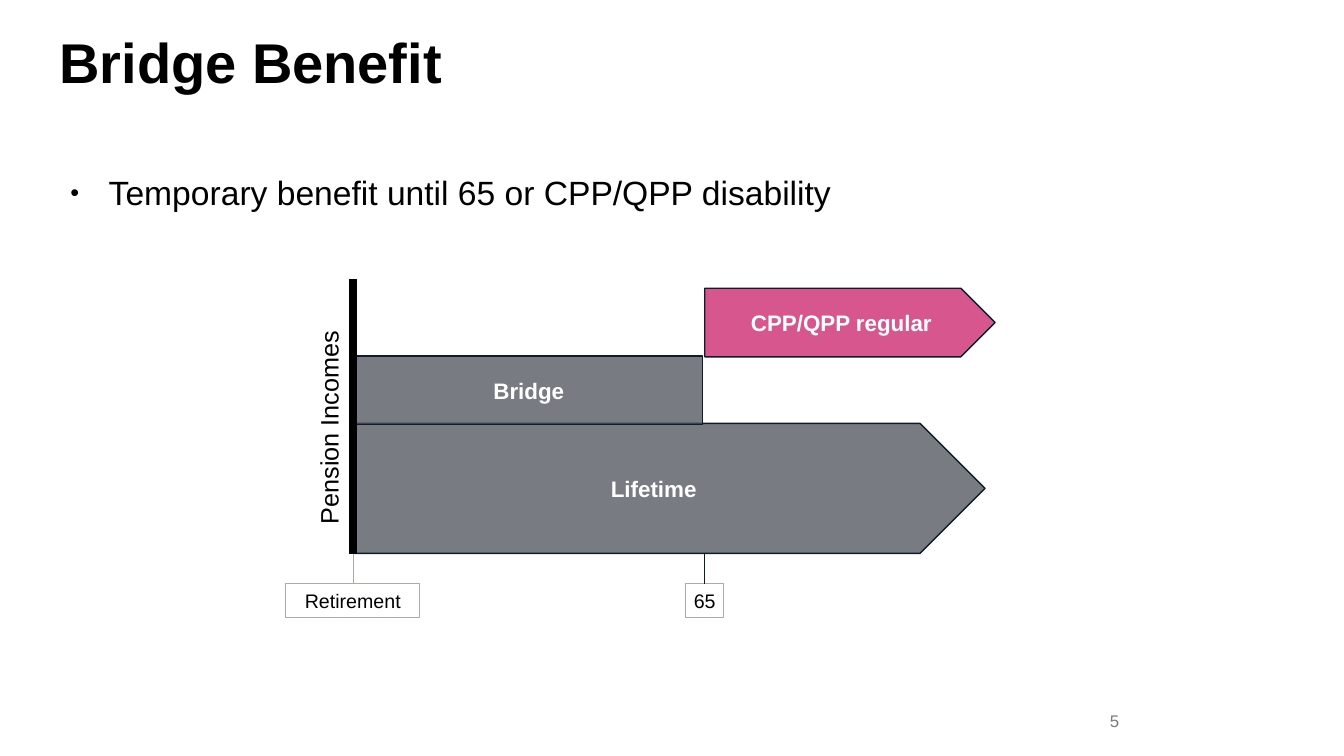
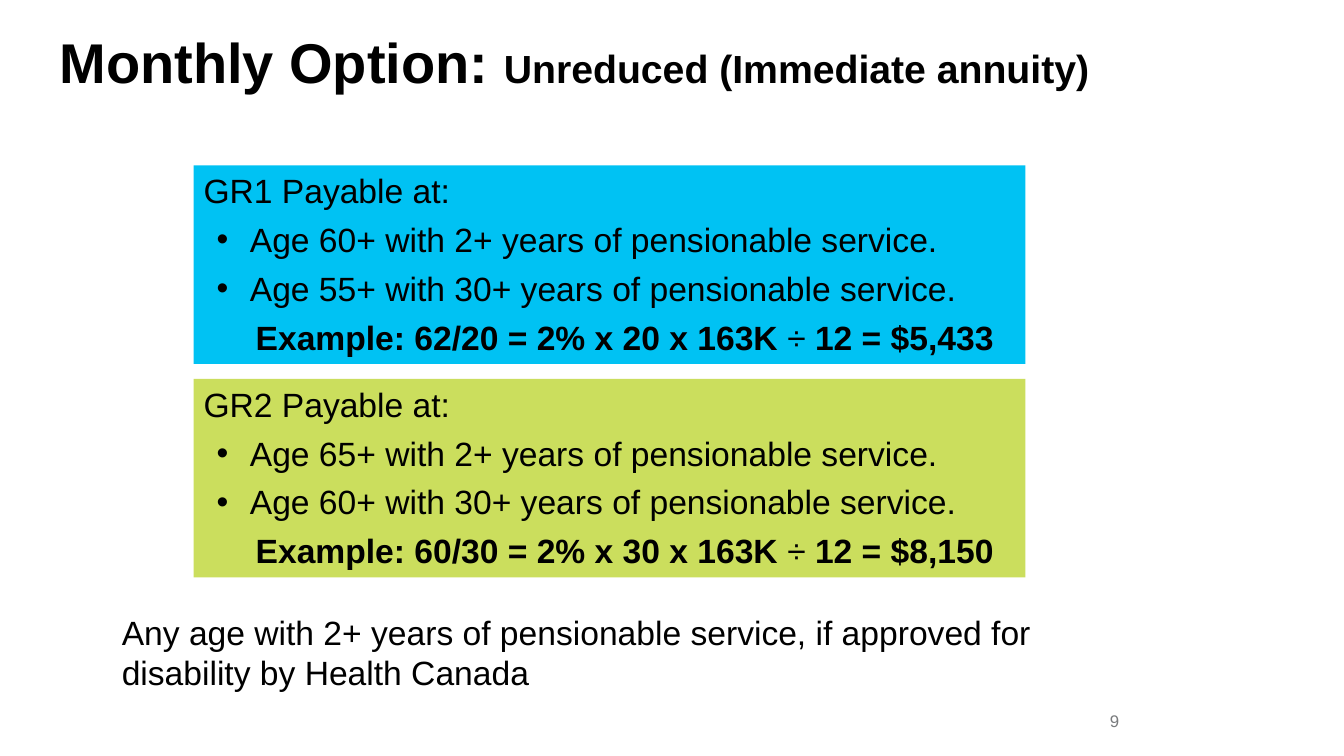
from dataclasses import dataclass
from lxml import etree
from pptx import Presentation, util as u
from pptx.dml.color import RGBColor
from pptx.enum import shapes as sh, text as tx
from pptx.oxml import ns


@dataclass(frozen=True)
class Theme:
    font: str = "Arial"
    ink: str = "000000"
    white: str = "FFFFFF"
    slate: str = "4B4F59"
    pink: str = "D1397A"
    edge: str = "0C1E2B"
    rule: str = "B0AAA2"
    blue: str = "00C2F3"
    lime: str = "C3D941"
    page: str = "797B7D"
    title: int = 40
    sub: int = 28
    body: int = 24
    axis: int = 18
    bar: int = 16
    tag: int = 14
    foot: int = 12


T = Theme()
WIDE, HIGH = 13.33, 7.5
ALIGN, ANCHOR = tx.PP_ALIGN, tx.MSO_ANCHOR
RECT, ARROW = sh.MSO_SHAPE.RECTANGLE, sh.MSO_SHAPE.PENTAGON

# Timeline: x of each date, y of each row
START, AGE, TOP, STEP, BASE = 3.5, 6.99, 2.86, 0.67, 5.5
TAG_Y, TAG_H = 5.79, 0.34

BENEFIT = "Temporary benefit until 65 or CPP/QPP disability"
# name, shape, x, row, width, height, colour, opacity
BARS = [
    ("Lifetime", ARROW, START + 0.02, 2, 6.25, 1.29, T.slate, 75),
    ("Bridge", RECT, START + 0.02, 1, 3.45, 0.68, T.slate, 75),
    ("CPP/QPP regular", ARROW, AGE, 0, 2.88, 0.68, T.pink, 85),
]
# name, x, width, side inset, tick colour
DATES = [
    ("Retirement", START, 1.33, 0.1, T.rule),
    ("65", AGE, 0.38, 0.05, T.edge),
]
GROUPS = [
    ("GR1 Payable at:",
     ["Age 60+ with 2+ years of pensionable service.",
      "Age 55+ with 30+ years of pensionable service."],
     ("Example: 62/20 = 2% x 20 x 163K", "12 = $5,433"), T.blue, 100),
    ("GR2 Payable at:",
     ["Age 65+ with 2+ years of pensionable service.",
      "Age 60+ with 30+ years of pensionable service."],
     ("Example: 60/30 = 2% x 30 x 163K", "12 = $8,150"), T.lime, 85),
]
NOTE = ("Any age with 2+ years of pensionable service, "
        "if approved for disability by Health Canada")


def rgb(code):
    return RGBColor.from_string(code)


def setup(shape, inset=(0.1, 0.05), anchor=ANCHOR.TOP):
    """Set wrapping, insets and anchor; return the text frame."""
    frame = shape.text_frame
    frame.word_wrap = True
    frame.vertical_anchor = anchor
    side, end = (u.Inches(v) for v in inset)
    frame.margin_left = frame.margin_right = side
    frame.margin_top = frame.margin_bottom = end
    return frame


def write(para, runs, color=T.ink, align=ALIGN.LEFT, after=0):
    """Fill a paragraph from (text, size, bold) runs."""
    para.alignment = align
    para.space_after = u.Pt(after)
    for words, size, bold in runs:
        run = para.add_run()
        run.text = words
        font = run.font
        font.name, font.size, font.bold = T.font, u.Pt(size), bold
        font.color.rgb = rgb(color)


def indent(para, left, hang=0, bullet=0):
    """Set indents in inches; bullet is its size in percent, 0 for none."""
    props = para._p.get_or_add_pPr()
    props.set("marL", str(u.Inches(left)))
    props.set("indent", str(u.Inches(-hang)))
    if bullet:
        etree.SubElement(props, ns.qn("a:buSzPct")).set("val", str(bullet * 1000))
        etree.SubElement(props, ns.qn("a:buFont")).set("typeface", T.font)
        etree.SubElement(props, ns.qn("a:buChar")).set("char", "•")


def label(slide, box, runs, inset=(0.1, 0.05), anchor=ANCHOR.TOP, **style):
    shape = slide.shapes.add_textbox(*map(u.Inches, box))
    write(setup(shape, inset, anchor).paragraphs[0], runs, **style)
    return shape


def block(slide, kind, box, fill=None, alpha=100, line=None, width=1):
    shape = slide.shapes.add_shape(kind, *map(u.Inches, box))
    shape.shadow.inherit = False
    if fill:
        shape.fill.solid()
        shape.fill.fore_color.rgb = rgb(fill)
        if alpha < 100:
            tint = shape._element.spPr.find(".//" + ns.qn("a:srgbClr"))
            etree.SubElement(tint, ns.qn("a:alpha")).set("val", str(alpha * 1000))
    else:
        shape.fill.background()
    if line:
        shape.line.color.rgb = rgb(line)
        shape.line.width = u.Pt(width)
    else:
        shape.line.fill.background()
    return shape


def stroke(slide, x, top, end, color, width):
    line = slide.shapes.add_connector(
        sh.MSO_CONNECTOR.STRAIGHT, *map(u.Inches, (x, top, x, end)))
    line.line.color.rgb = rgb(color)
    line.line.width = u.Pt(width)
    etree.SubElement(line._element.spPr, ns.qn("a:effectLst"))
    return line


def start(deck, title, page):
    """Add a slide with its title and page number."""
    slide = deck.slides.add_slide(deck.slide_layouts[6])
    box = label(slide, (0.59, 0.35, 12.01, 0.85), title, inset=(0, 0))
    box.text_frame.paragraphs[0].line_spacing = 0.9
    label(slide, (9.63, 6.95, 1.57, 0.4), [(str(page), T.foot, False)],
          anchor=ANCHOR.MIDDLE, color=T.page, align=ALIGN.RIGHT)
    return slide


def bridge(deck):
    slide = start(deck, [("Bridge Benefit", T.title, True)], 5)
    lead = slide.shapes.add_textbox(*map(u.Inches, (0.6, 1.66, 11.99, 0.81)))
    para = setup(lead).paragraphs[0]
    indent(para, 0.38, 0.38, 75)
    write(para, [(BENEFIT, T.body, False)])

    axis = label(slide, (2.17, 4.01, 2.18, 0.4),
                 [("Pension Incomes", T.axis, False)])
    axis.rotation = 270
    for name, kind, x, row, wide, high, fill, alpha in BARS:
        bar = block(slide, kind, (x, TOP + row * STEP, wide, high),
                    fill, alpha, T.edge)
        frame = setup(bar, (0, 0.05), ANCHOR.MIDDLE)
        write(frame.paragraphs[0], [(name, T.bar, True)], T.white, ALIGN.CENTER)
    stroke(slide, START, 2.77, BASE, T.ink, 6)
    for name, x, wide, side, color in DATES:
        tag = block(slide, RECT, (x - wide / 2, TAG_Y, wide, TAG_H),
                    line=T.rule, width=0.75)
        write(setup(tag, (side, 0.05)).paragraphs[0],
              [(name, T.tag, False)], align=ALIGN.CENTER)
        stroke(slide, x, BASE, TAG_Y, color, 0.5).end_connect(tag, 0)


def monthly(deck):
    slide = start(deck, [("Monthly Option: ", T.title, True),
                         ("Unreduced (Immediate annuity)", T.sub, True)], 9)
    wide, high, gap = 8.25, 1.97, 0.15
    for row, (head, rules, (left, right), fill, alpha) in enumerate(GROUPS):
        box = block(slide, RECT, (1.92, 1.64 + row * (high + gap), wide, high),
                    fill, alpha)
        frame = setup(box)
        write(frame.paragraphs[0], [(head, T.body, False)], after=6)
        for rule in rules:
            para = frame.add_paragraph()
            indent(para, 0.46, 0.33, 100)
            write(para, [(rule, T.body, False)], after=6)
        para = frame.add_paragraph()
        indent(para, 0.3)
        write(para, [(left, T.body, True), (" ÷ ", T.body, False),
                     (right, T.body, True)], align=ALIGN.CENTER, after=6)
    label(slide, (1.11, 6.02, 10.16, 0.91), [(NOTE, T.body, False)])


def main():
    deck = Presentation()
    deck.slide_width, deck.slide_height = u.Inches(WIDE), u.Inches(HIGH)
    bridge(deck)
    monthly(deck)
    deck.save("out.pptx")


if __name__ == "__main__":
    main()
